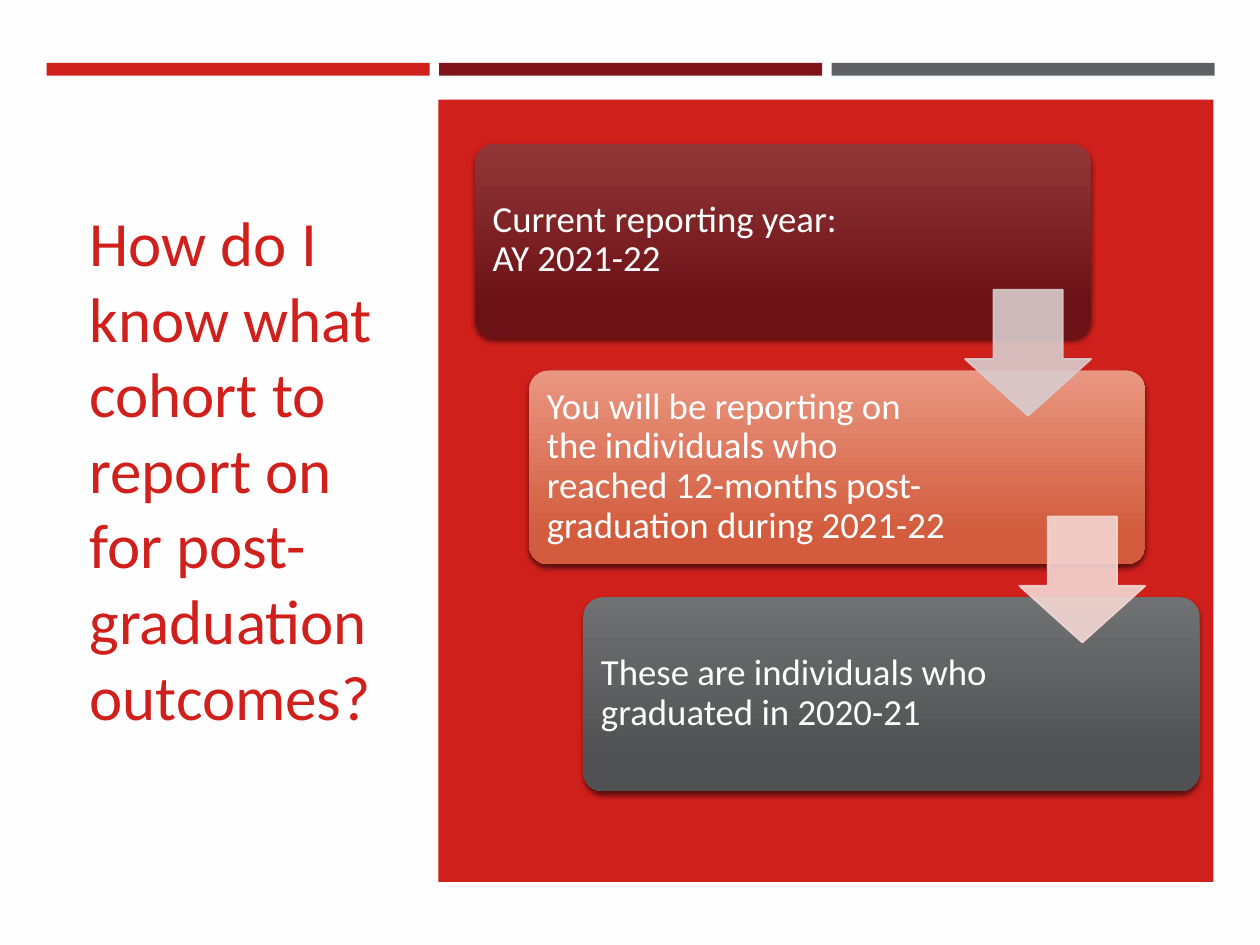
from lxml import etree
from pptx import Presentation
from pptx.dml import color
from pptx.enum import shapes, text
from pptx.oxml import ns
from pptx.util import Inches, Pt

KIND = shapes.MSO_SHAPE
FONT = "Calibri"
RED, WHITE = "D0201C", "FFFFFF"
STEP_X, STEP_Y = 0.43, 1.8


def rgb(code):
    """Turn a hex string into a colour."""
    return color.RGBColor.from_string(code)


def sub(parent, tag, **attrs):
    """Append a DrawingML element to a parent."""
    node = etree.SubElement(parent, ns.qn(tag))
    for key, value in attrs.items():
        node.set(key, str(value))
    return node


def fade(fill, percent):
    """Set the opacity of a solid fill."""
    sub(fill.fore_color._xFill[0], "a:alpha", val=percent * 1000)


def write(frame, lines, size, code):
    """Write lines into the first paragraph, split by line breaks."""
    frame.word_wrap = True
    frame.auto_size = text.MSO_AUTO_SIZE.NONE
    frame.vertical_anchor = text.MSO_ANCHOR.MIDDLE
    para = frame.paragraphs[0]
    para.alignment = text.PP_ALIGN.LEFT
    for i, line in enumerate(lines):
        if i:
            para.add_line_break()
        run = para.add_run()
        run.text = line
        run.font.name = FONT
        run.font.size = Pt(size)
        run.font.color.rgb = rgb(code)
    return para


def add_box(slide, kind, box, code=None):
    """Add a preset shape without line or shadow."""
    shape = slide.shapes.add_shape(kind, *map(Inches, box))
    shape.shadow.inherit = False
    shape.line.fill.background()
    if code:
        shape.fill.solid()
        shape.fill.fore_color.rgb = rgb(code)
    return shape


def add_card(slide, x, y, wide, lines, top, base):
    """Add a rounded gradient card with its text."""
    card = add_box(slide, KIND.ROUNDED_RECTANGLE, (x, y, 4.89, 1.54))
    card.adjustments[0] = 0.1
    card.fill.gradient()
    card.fill.gradient_angle = 270
    for stop, place, code in zip(card.fill.gradient_stops, (0, 0.84), (top, base)):
        stop.position = place
        stop.color.rgb = rgb(code)
    glow = sub(card._element.spPr.find(ns.qn("a:effectLst")), "a:outerShdw",
               blurRad=Pt(3), dist=Pt(2), dir=5400000, rotWithShape=0)
    sub(sub(glow, "a:srgbClr", val="000000"), "a:alpha", val=55000)

    label = slide.shapes.add_textbox(*map(Inches, (x + 0.05, y + 0.04, wide, 1.45)))
    frame = label.text_frame
    frame.margin_left = frame.margin_right = Inches(0.09)
    frame.margin_top = frame.margin_bottom = Inches(0.09)
    write(frame, lines, 21, WHITE).line_spacing = 0.9


def add_arrow(slide, x, y, code):
    """Add a translucent down arrow."""
    arrow = add_box(slide, KIND.DOWN_ARROW, (x, y, 1, 1), code)
    arrow.adjustments[0] = 0.55
    arrow.adjustments[1] = 0.45
    arrow.line.width = Pt(1)
    arrow.line.fill.solid()
    arrow.line.fill.fore_color.rgb = rgb(code)
    fade(arrow.fill, 90)
    fade(arrow.line.fill, 90)


def add_title(slide, words):
    """Place and fill the title."""
    title = slide.shapes.title
    title.left, title.top, title.width, title.height = map(
        Inches, (0.61, 1.14, 2.5, 5.15))
    write(title.text_frame, [words], 36, RED)


def main():
    """Build the slide and save it."""
    deck = Presentation()
    deck.slide_width, deck.slide_height = Inches(10), Inches(7.5)
    slide = deck.slides.add_slide(deck.slide_layouts[5])
    slide.background.fill.solid()
    slide.background.fill.fore_color.rgb = rgb("FFFEFF")

    add_title(slide, "How do I know what cohort to report on "
                     "for post-graduation outcomes?")
    for i, code in enumerate((RED, "811419", "5F6062")):
        add_box(slide, KIND.RECTANGLE, (0.37 + 3.115 * i, 0.5, 3.04, 0.1), code)
    add_box(slide, KIND.RECTANGLE, (3.48, 0.79, 6.15, 6.21), RED)

    cards = (
        (3.22, ["Current reporting year:", "AY 2021-22"], "923638", "6C1115"),
        (3.36, ["You will be reporting on the individuals who reached "
                "12-months post-graduation during 2021-22"], "E99782", "D25C3D"),
        (3.36, ["These are individuals who graduated in 2020-21"],
         "707173", "505152"),
    )
    for i, card in enumerate(cards):
        add_card(slide, 3.77 + STEP_X * i, 1.14 + STEP_Y * i, *card)
    for i, code in enumerate(("D8CCCC", "F4D7D2")):
        add_arrow(slide, 7.66 + STEP_X * i, 2.3 + STEP_Y * i, code)
    deck.save("out.pptx")


if __name__ == "__main__":
    main()
